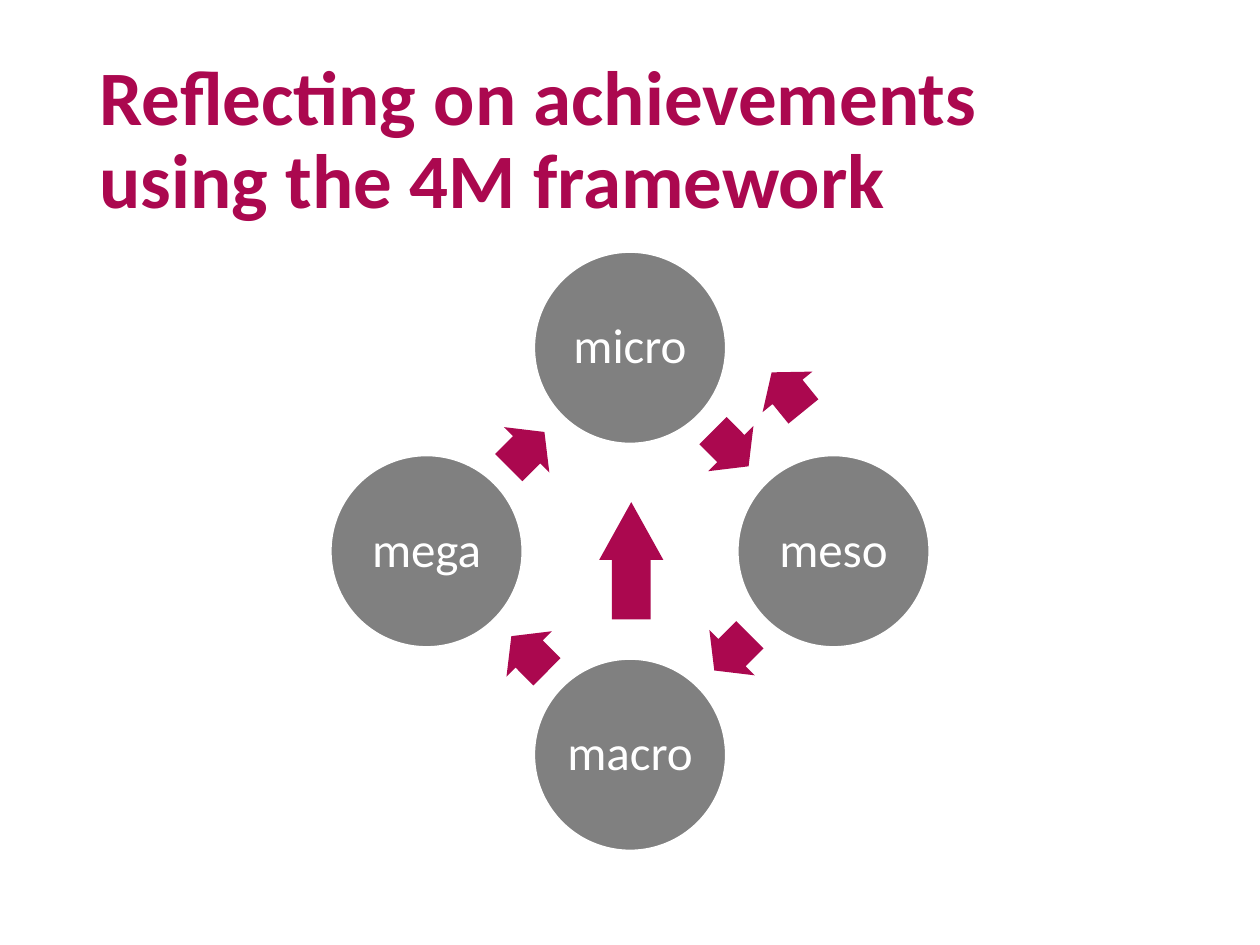
from dataclasses import dataclass
from math import cos, sin, radians

from pptx import Presentation
from pptx.dml.color import RGBColor as RGB
from pptx.enum.shapes import MSO_SHAPE as Shape
from pptx.enum.text import MSO_ANCHOR as Anchor, MSO_AUTO_SIZE as Fit, PP_ALIGN as Align
from pptx.util import Inches, Pt


@dataclass(frozen=True)
class Theme:
    font: str = "Calibri"
    accent: RGB = RGB(0xAB, 0x08, 0x4F)
    grey: RGB = RGB(0x80, 0x80, 0x80)
    white: RGB = RGB(0xFF, 0xFF, 0xFF)
    title: Pt = Pt(44)
    label: Pt = Pt(28)


theme = Theme()


def write(frame, text, size, color, align, bold=False):
    frame.word_wrap = True
    frame.auto_size = Fit.NONE
    frame.vertical_anchor = Anchor.MIDDLE
    para = frame.paragraphs[0]
    para.alignment = align
    para.line_spacing = 0.9
    run = para.add_run()
    run.text = text
    font = run.font
    font.name, font.size, font.bold = theme.font, size, bold
    font.color.rgb = color


def add_solid(kind, x, y, wide, high, fill):
    """Add a filled shape centred on x, y."""
    shape = slide.shapes.add_shape(
        kind, Inches(x - wide / 2), Inches(y - high / 2), Inches(wide), Inches(high))
    shape.shadow.inherit = False
    shape.fill.solid()
    shape.fill.fore_color.rgb = fill
    shape.line.fill.background()
    return shape


deck = Presentation()
deck.slide_width, deck.slide_height = Inches(10), Inches(7.5)
slide = deck.slides.add_slide(deck.slide_layouts[5])

title = slide.shapes.title
title.left, title.top = Inches(0.69), Inches(0.4)
title.width, title.height = Inches(8.62), Inches(1.45)
write(title.text_frame, "Reflecting on achievements using the 4M framework",
      theme.title, theme.accent, Align.LEFT, True)

# The four levels sit on a ring, clockwise from the top
mid_x, mid_y, ring = 5, 4.375, 1.615
for step, name in enumerate(["micro", "meso", "macro", "mega"]):
    turn = radians(90 * step - 90)
    disc = add_solid(Shape.OVAL, mid_x + ring * cos(turn), mid_y + ring * sin(turn),
                     1.52, 1.52, theme.grey)
    disc.line.color.rgb = theme.white
    disc.line.width = Pt(1)
    frame = disc.text_frame
    # An oval already insets its text
    frame.margin_left = frame.margin_right = 0
    frame.margin_top = frame.margin_bottom = 0
    write(frame, name, theme.label, theme.white, Align.CENTER)

# Centre x, centre y, length, angle, head length over the shorter side
arrows = [
    (5.8, 3.56, 0.4, 45, 0.5),
    (5.81, 5.18, 0.4, 135, 0.5),
    (4.2, 5.19, 0.4, 225, 0.5),
    (4.18, 3.57, 0.4, 315, 0.5),
    (6.25, 3.11, 0.4, 230.9, 0.5),
    (5.01, 4.45, 0.93, 270, 0.9),
]
for x, y, length, angle, head in arrows:
    arrow = add_solid(Shape.RIGHT_ARROW, x, y, length, 0.51, theme.accent)
    arrow.rotation = angle
    arrow.adjustments[0] = 0.6
    arrow.adjustments[1] = head

deck.save("out.pptx")
